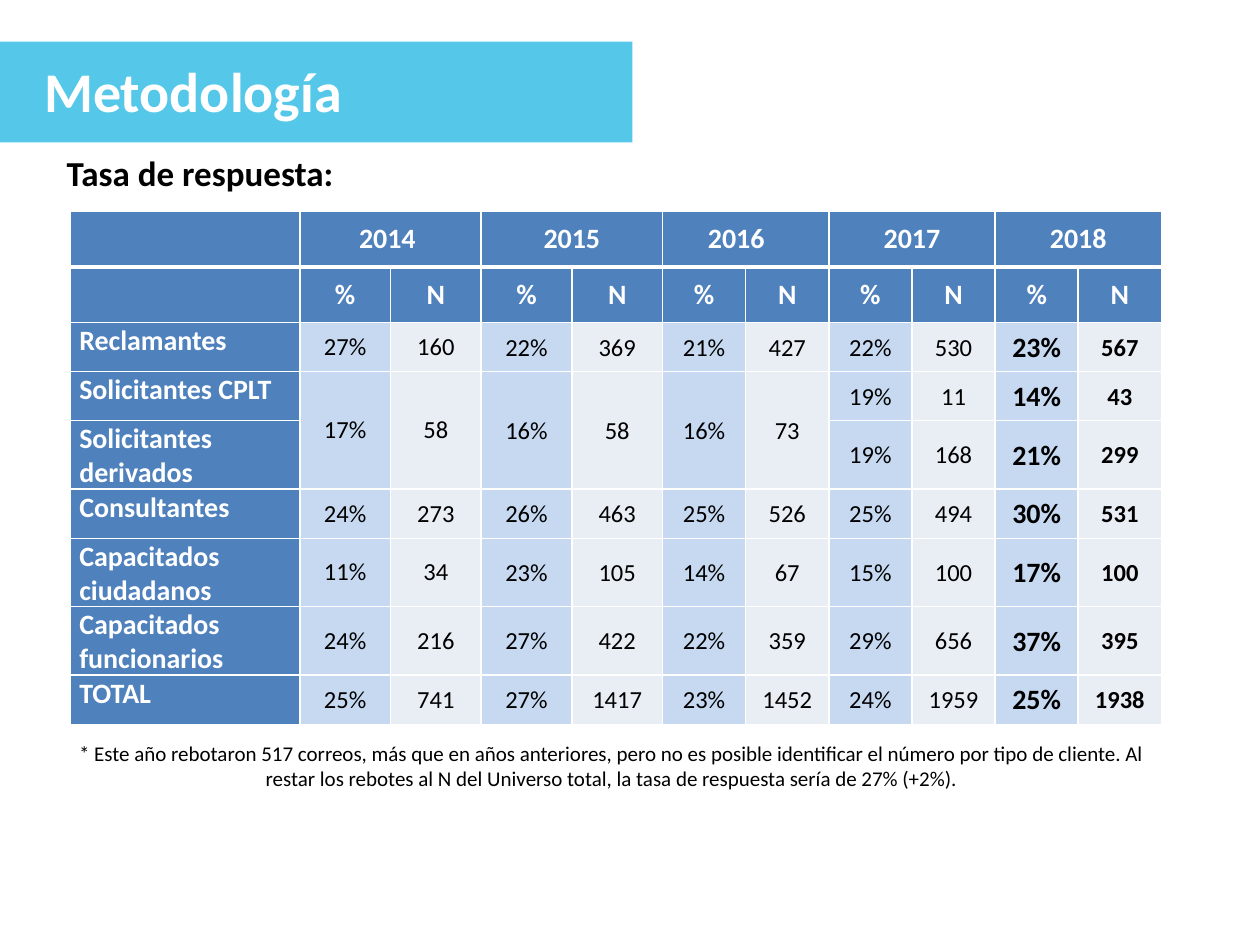
"""Builds the response-rate slide: title band, yearly table and footnote."""
from lxml.etree import SubElement
from pptx import Presentation
from pptx.dml.color import RGBColor
from pptx.enum.shapes import MSO_SHAPE
from pptx.enum.text import MSO_ANCHOR, MSO_AUTO_SIZE, PP_ALIGN
from pptx.oxml.ns import qn
from pptx.util import Inches, Pt

COLORS = {"band": "55C8E9", "head": "4F81BD", "pct": "C6D9F1", "count": "E9EDF4",
          "white": "FFFFFF", "black": "000000"}
FONT = "Calibri"
YEARS = ["2014", "2015", "2016", "2017", "2018"]
YEAR_SHIFT = {"2014": 0.05, "2016": 0.15}
COL_WIDTHS = [1.82] + [0.72] * 4 + [0.66] * 6
ROW_HEIGHTS = [0.44, 0.44, 0.39, 0.39, 0.54, 0.39, 0.54, 0.54, 0.39]
RATES = [
    ("Reclamantes", "27% 160 22% 369 21% 427 22% 530 23% 567"),
    ("Solicitantes CPLT", "17% 58 16% 58 16% 73 19% 11 14% 43"),
    ("Solicitantes derivados", "- - - - - - 19% 168 21% 299"),
    ("Consultantes", "24% 273 26% 463 25% 526 25% 494 30% 531"),
    ("Capacitados ciudadanos", "11% 34 23% 105 14% 67 15% 100 17% 100"),
    ("Capacitados funcionarios", "24% 216 27% 422 22% 359 29% 656 37% 395"),
    ("TOTAL", "25% 741 27% 1417 23% 1452 24% 1959 25% 1938"),
]
NOTE = ("* Este año rebotaron 517 correos, más que en años anteriores, pero no es posible "
        "identificar el número por tipo de cliente. Al restar los rebotes al N del Universo "
        "total, la tasa de respuesta sería de 27% (+2%).")


def rgb(name):
    """Return the named colour."""
    return RGBColor.from_string(COLORS[name])


def write(tf, text, size=16, color="black", bold=False, align=PP_ALIGN.LEFT, spacing=None):
    """Write one formatted paragraph into a text frame."""
    p = tf.paragraphs[0]
    p.alignment = align
    if spacing:
        p.line_spacing = spacing
    r = p.add_run()
    r.text = text
    r.font.name, r.font.size, r.font.bold = FONT, Pt(size), bold
    r.font.color.rgb = rgb(color)


def place(sp, left, top, width, height):
    """Set the position and size of a shape in inches."""
    sp.left, sp.top, sp.width, sp.height = map(Inches, (left, top, width, height))


def add_title(slide, text):
    """Put the title on a coloured band."""
    sp = slide.shapes.add_shape(MSO_SHAPE.RECTANGLE, 0, Inches(0.33), Inches(5.02), Inches(0.8))
    sp.shadow.inherit = False
    sp.fill.solid()
    sp.fill.fore_color.rgb = rgb("band")
    sp.line.fill.background()
    title = slide.shapes.title
    title._element.addprevious(sp._element)
    place(title, 0.25, 0.4, 2.59, 0.64)
    tf = title.text_frame
    tf.word_wrap = False
    tf.auto_size = MSO_AUTO_SIZE.NONE
    tf.vertical_anchor = MSO_ANCHOR.TOP
    write(tf, text, size=32, color="white", bold=True)


def add_text(slide, box, text, **fmt):
    """Add a wrapping text box."""
    tf = slide.shapes.add_textbox(*map(Inches, box)).text_frame
    tf.word_wrap = True
    write(tf, text, **fmt)


def style_cell(cell, fill, top=1, bottom=1):
    """Give a cell white borders and a solid fill."""
    tcPr = cell._tc.get_or_add_tcPr()
    for side, width in zip("LRTB", (1, 1, top, bottom)):
        ln = SubElement(tcPr, qn(f"a:ln{side}"), w=str(Pt(width)))
        SubElement(SubElement(ln, qn("a:solidFill")), qn("a:srgbClr"), val=COLORS["white"])
    cell.fill.solid()
    cell.fill.fore_color.rgb = rgb(fill)


def fill_cell(cell, text, margins=(0, 0, 0, 0), anchor=MSO_ANCHOR.MIDDLE, **fmt):
    """Write a cell with margins given as left, top, right, bottom."""
    (cell.margin_left, cell.margin_top,
     cell.margin_right, cell.margin_bottom) = map(Inches, margins)
    cell.vertical_anchor = anchor
    write(cell.text_frame, text, **fmt)


def fill_header(table):
    """Write the years and the % and N headings."""
    fmt = dict(color="white", bold=True, align=PP_ALIGN.CENTER)
    for i, year in enumerate(YEARS):
        col = 1 + 2 * i
        table.cell(0, col).merge(table.cell(0, col + 1))
        fill_cell(table.cell(0, col), year, (0, 0, YEAR_SHIFT.get(year, 0), 0), **fmt)
        for j, label in enumerate("%N"):
            fill_cell(table.cell(1, col + j), label, **fmt)


def fill_rates(table):
    """Write the client types with their rates and counts."""
    for row, (label, values) in enumerate(RATES, start=2):
        fill_cell(table.cell(row, 0), label, (0.07, 0.01, 0.07, 0), MSO_ANCHOR.TOP,
                  color="white", bold=True)
        for col, value in enumerate(values.split(), start=1):
            if value == "-":
                table.cell(row - 1, col).merge(table.cell(row, col))
                continue
            margins = (0.07, 0, 0.07, 0) if col < 3 else (0.01, 0.01, 0.01, 0)
            fill_cell(table.cell(row, col), value, margins, size=16 if col == 9 else 14,
                      bold=col >= 9, align=PP_ALIGN.CENTER)


def add_rate_table(slide, left, top):
    """Add the table of response rates by year."""
    frame = slide.shapes.add_table(len(ROW_HEIGHTS), len(COL_WIDTHS), Inches(left), Inches(top),
                                   Inches(sum(COL_WIDTHS)), Inches(sum(ROW_HEIGHTS)))
    table = frame.table
    table.horz_banding = False
    for column, width in zip(table.columns, COL_WIDTHS):
        column.width = Inches(width)
    for row, height in zip(table.rows, ROW_HEIGHTS):
        row.height = Inches(height)
    for r in range(len(ROW_HEIGHTS)):
        for c in range(len(COL_WIDTHS)):
            fill = "head" if r < 2 or c == 0 else ("pct" if c % 2 else "count")
            style_cell(table.cell(r, c), fill, top=3 if r == 1 else 1, bottom=3 if r == 0 else 1)
    fill_header(table)
    fill_rates(table)


def main():
    """Build and save the slide."""
    prs = Presentation()
    prs.slide_width, prs.slide_height = Inches(10), Inches(7.5)
    slide = prs.slides.add_slide(prs.slide_layouts[5])
    add_title(slide, "Metodología")
    add_text(slide, (0.43, 1.22, 8.81, 0.38), "Tasa de respuesta:", size=20, bold=True,
             align=PP_ALIGN.JUSTIFY, spacing=0.8)
    add_text(slide, (0.43, 5.83, 8.85, 0.5), NOTE, size=12, align=PP_ALIGN.CENTER)
    add_rate_table(slide, 0.56, 1.68)
    prs.save("out.pptx")


if __name__ == "__main__":
    main()
